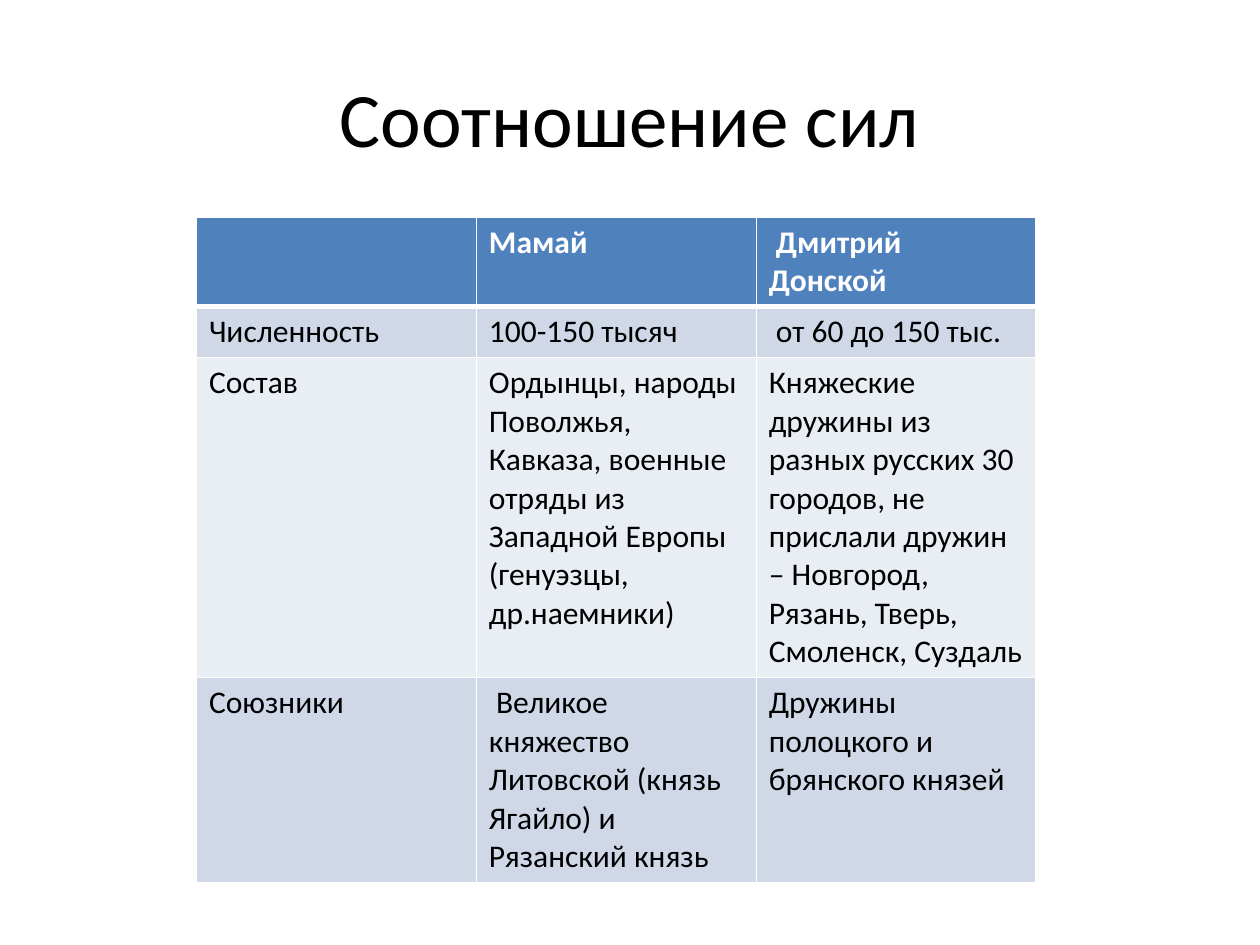
"""Builds a slide with a table comparing the forces of two armies."""
import pptx
import pptx.dml.color
import pptx.enum.text
import pptx.oxml
import pptx.oxml.ns
import pptx.util

Cm = pptx.util.Cm
Pt = pptx.util.Pt
COLORS = {"text": "000000", "white": "FFFFFF", "header": "4F81BD",
          "odd": "D0D8E8", "even": "E9EDF4"}


def rgb(name):
    return pptx.dml.color.RGBColor.from_string(COLORS[name])


def write(tf, text, size=18, color="text", bold=False, align=None):
    p = tf.paragraphs[0]
    p.alignment = align
    r = p.add_run()
    r.text = text
    r.font.name = "Calibri"
    r.font.size = Pt(size)
    r.font.bold = bold
    r.font.color.rgb = rgb(color)


prs = pptx.Presentation()
prs.slide_width, prs.slide_height = Cm(25.4), Cm(19.05)
s = prs.slides.add_slide(prs.slide_layouts[5])

title = s.shapes.title
title.left, title.top, title.width, title.height = Cm(1.27), Cm(0.76), Cm(22.86), Cm(3.18)
title.text_frame.vertical_anchor = pptx.enum.text.MSO_ANCHOR.MIDDLE
write(title.text_frame, "Соотношение сил", size=44,
      align=pptx.enum.text.PP_ALIGN.CENTER)

rows = [
    ["", "Мамай", " Дмитрий Донской"],
    ["Численность", "100-150 тысяч", " от 60 до 150 тыс."],
    ["Состав",
     "Ордынцы, народы Поволжья, Кавказа, военные отряды из Западной Европы "
     "(генуэзцы, др.наемники)",
     "Княжеские дружины из разных русских 30 городов, не прислали дружин – "
     "Новгород, Рязань, Тверь, Смоленск, Суздаль"],
    ["Союзники",
     " Великое княжество Литовской (князь Ягайло) и Рязанский князь",
     "Дружины полоцкого и брянского князей"],
]
heights = [1.78, 1.03, 6.4, 4.02]
fills = ["header", "odd", "even", "odd"]

table = s.shapes.add_table(len(rows), 3, Cm(3.96), Cm(4.37),
                           Cm(16.93), Cm(sum(heights))).table
for i, (row, height, fill) in enumerate(zip(rows, heights, fills)):
    table.rows[i].height = Cm(height)
    for j, text in enumerate(row):
        cell = table.cell(i, j)
        if text:
            write(cell.text_frame, text, color="text" if i else "white", bold=i == 0)
        else:
            cell.text_frame.paragraphs[0].font.size = Pt(18)
        widths = {"lnL": 1, "lnR": 1, "lnT": 3 if i == 1 else 1, "lnB": 1 if i else 3}
        for side, width in widths.items():
            cell._tc.get_or_add_tcPr().append(pptx.oxml.parse_xml(
                f'<a:{side} {pptx.oxml.ns.nsdecls("a")} w="{Pt(width)}"><a:solidFill>'
                f'<a:srgbClr val="{COLORS["white"]}"/></a:solidFill></a:{side}>'))
        cell.fill.solid()
        cell.fill.fore_color.rgb = rgb(fill)

prs.save("out.pptx")
